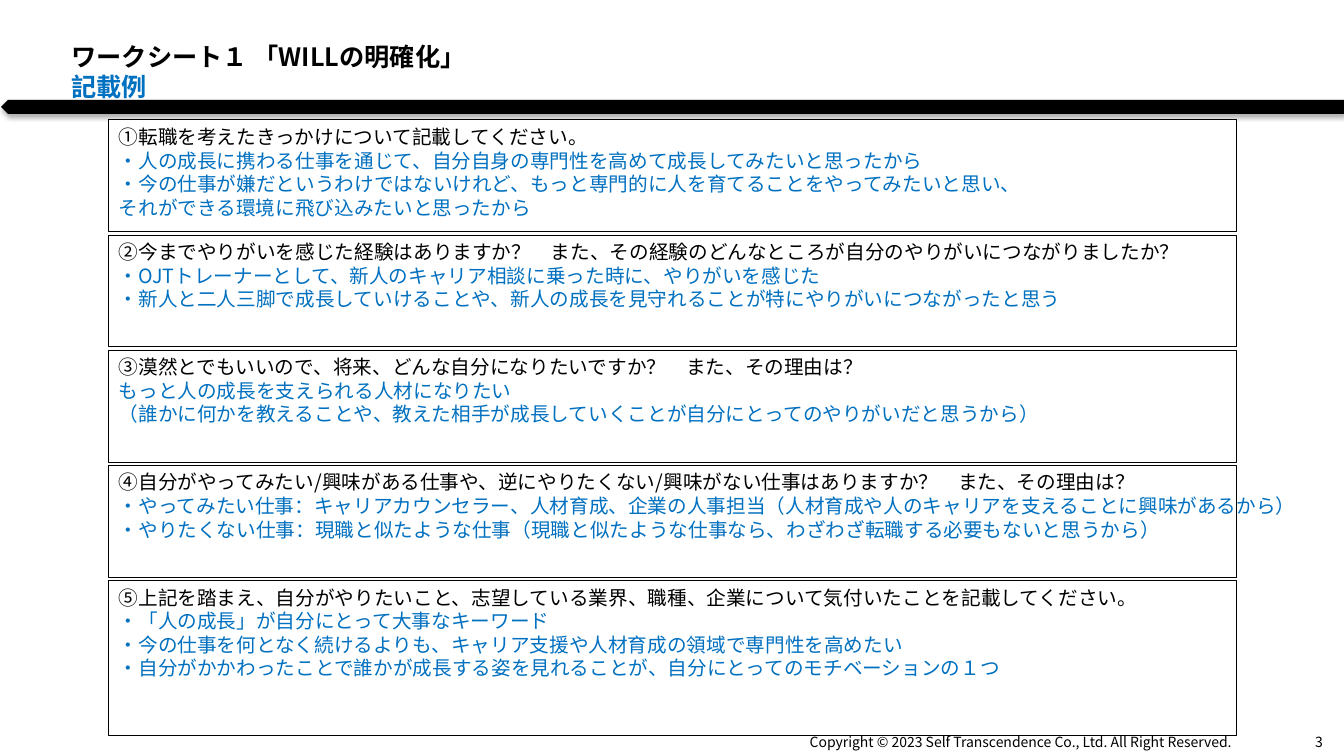
from dataclasses import dataclass

from lxml import etree
from pptx import Presentation
from pptx.dml.color import RGBColor
from pptx.enum.shapes import MSO_SHAPE
from pptx.enum.text import MSO_ANCHOR, MSO_AUTO_SIZE, PP_ALIGN
from pptx.oxml.ns import qn
from pptx.shapes.autoshape import Shape
from pptx.slide import Slide
from pptx.text.text import _Run
from pptx.util import Emu, Inches, Pt

RECTANGLE = MSO_SHAPE.RECTANGLE
PENTAGON = MSO_SHAPE.PENTAGON
TOP = MSO_ANCHOR.TOP
BOTTOM = MSO_ANCHOR.BOTTOM
LEFT = PP_ALIGN.LEFT
RIGHT = PP_ALIGN.RIGHT
GROW = MSO_AUTO_SIZE.SHAPE_TO_FIT_TEXT

BLACK = RGBColor(0x00, 0x00, 0x00)
WHITE = RGBColor(0xFF, 0xFF, 0xFF)
BLUE = RGBColor(0x00, 0x70, 0xC0)
FONT = "Noto Sans CJK JP"

SLIDE_WIDTH = Inches(13.33)
SLIDE_HEIGHT = Inches(7.5)

QUESTION_TOP = 15.87
QUESTION_HEIGHT = 14.8
QUESTION_GAP = 0.43
LAST_QUESTION_HEIGHT = 20.53


@dataclass(frozen=True)
class Area:
    """Position and size in percent of the slide."""

    left: float
    top: float
    width: float
    height: float

    def lengths(self) -> tuple[Emu, Emu, Emu, Emu]:
        return (
            Emu(round(SLIDE_WIDTH * self.left / 100)),
            Emu(round(SLIDE_HEIGHT * self.top / 100)),
            Emu(round(SLIDE_WIDTH * self.width / 100)),
            Emu(round(SLIDE_HEIGHT * self.height / 100)),
        )


@dataclass(frozen=True)
class Question:
    prompt: str
    answers: tuple[str, ...]
    height: float = QUESTION_HEIGHT


@dataclass(frozen=True)
class FooterText:
    text: str
    area: Area
    line_spacing: float = 1.0


QUESTIONS = (
    Question(
        "①転職を考えたきっかけについて記載してください。",
        (
            "・人の成長に携わる仕事を通じて、自分自身の専門性を高めて成長してみたいと思ったから",
            "・今の仕事が嫌だというわけではないけれど、もっと専門的に人を育てることをやってみたいと思い、",
            "それができる環境に飛び込みたいと思ったから",
        ),
    ),
    Question(
        "②今までやりがいを感じた経験はありますか？　また、その経験のどんなところが自分のやりがいにつながりましたか？",
        (
            "・OJTトレーナーとして、新人のキャリア相談に乗った時に、やりがいを感じた",
            "・新人と二人三脚で成長していけることや、新人の成長を見守れることが特にやりがいにつながったと思う",
        ),
    ),
    Question(
        "③漠然とでもいいので、将来、どんな自分になりたいですか？　また、その理由は？",
        (
            "もっと人の成長を支えられる人材になりたい",
            "（誰かに何かを教えることや、教えた相手が成長していくことが自分にとってのやりがいだと思うから）",
        ),
    ),
    Question(
        "④自分がやってみたい/興味がある仕事や、逆にやりたくない/興味がない仕事はありますか？　また、その理由は？",
        (
            "・やってみたい仕事：キャリアカウンセラー、人材育成、企業の人事担当（人材育成や人のキャリアを支えることに興味があるから）",
            "・やりたくない仕事：現職と似たような仕事（現職と似たような仕事なら、わざわざ転職する必要もないと思うから）",
        ),
    ),
    Question(
        "⑤上記を踏まえ、自分がやりたいこと、志望している業界、職種、企業について気付いたことを記載してください。",
        (
            "・「人の成長」が自分にとって大事なキーワード",
            "・今の仕事を何となく続けるよりも、キャリア支援や人材育成の領域で専門性を高めたい",
            "・自分がかかわったことで誰かが成長する姿を見れることが、自分にとってのモチベーションの１つ",
        ),
        LAST_QUESTION_HEIGHT,
    ),
)

FOOTER_TEXTS = (
    FooterText(
        "Copyright © 2023 Self Transcendence Co., Ltd. All Right Reserved.",
        Area(44.49, 95.2, 47.86, 4.67),
    ),
    FooterText("3", Area(92.72, 94.67, 6.45, 5.2), 0.8),
)


def format_run(run: _Run, size: int, color: RGBColor, bold: bool = False) -> None:
    run.font.size = Pt(size)
    run.font.bold = bold
    run.font.color.rgb = color
    run.font.name = FONT
    properties = run.font._element
    etree.SubElement(properties, qn("a:ea")).set("typeface", FONT)


def add_filled_shape(slide: Slide, kind: MSO_SHAPE, area: Area, color: RGBColor) -> Shape:
    shape = slide.shapes.add_shape(kind, *area.lengths())
    shape.shadow.inherit = False
    shape.fill.solid()
    shape.fill.fore_color.rgb = color
    return shape


def add_band(slide: Slide) -> None:
    band = add_filled_shape(slide, PENTAGON, Area(0.08, 13.2, 100, 1.87), BLACK)
    band.line.fill.background()
    properties = band._element.spPr
    properties.find(qn("a:xfrm")).set("flipH", "1")
    shadow = etree.SubElement(
        properties.find(qn("a:effectLst")),
        qn("a:outerShdw"),
        blurRad=str(Pt(3.5)),
        dist=str(Pt(2.2)),
        dir="5400000",
        rotWithShape="0",
    )
    shadow_color = etree.SubElement(shadow, qn("a:srgbClr"), val=str(BLACK))
    etree.SubElement(shadow_color, qn("a:alpha"), val="32000")


def add_title(slide: Slide) -> None:
    text_frame = slide.shapes.add_textbox(*Area(4.58, 4.8, 33.76, 5.33).lengths()).text_frame
    text_frame.word_wrap = False
    text_frame.auto_size = GROW
    paragraph = text_frame.paragraphs[0]
    paragraph.text = "ワークシート１ 「WILLの明確化」　\v記載例"
    for run, color in zip(paragraph.runs, (BLACK, BLUE)):
        format_run(run, 18, color, bold=True)


def add_question(slide: Slide, question: Question, top: float) -> None:
    box = add_filled_shape(slide, RECTANGLE, Area(8.1, top, 83.87, question.height), WHITE)
    box.line.color.rgb = BLACK
    box.line.width = Pt(0.75)
    text_frame = box.text_frame
    text_frame.word_wrap = False
    text_frame.vertical_anchor = TOP
    text_frame.text = "\n".join((question.prompt, *question.answers))
    for index, paragraph in enumerate(text_frame.paragraphs):
        paragraph.alignment = LEFT
        format_run(paragraph.runs[0], 14, BLUE if index else BLACK)


def add_footer_text(slide: Slide, footer: FooterText) -> None:
    text_frame = slide.shapes.add_textbox(*footer.area.lengths()).text_frame
    text_frame.word_wrap = True
    text_frame.vertical_anchor = BOTTOM
    text_frame.text = footer.text
    paragraph = text_frame.paragraphs[0]
    paragraph.alignment = RIGHT
    paragraph.line_spacing = footer.line_spacing
    format_run(paragraph.runs[0], 10, BLACK)


def main() -> None:
    presentation = Presentation()
    presentation.slide_width = SLIDE_WIDTH
    presentation.slide_height = SLIDE_HEIGHT
    slide = presentation.slides.add_slide(presentation.slide_layouts[6])
    add_band(slide)
    add_title(slide)
    for index, question in enumerate(QUESTIONS):
        add_question(slide, question, QUESTION_TOP + index * (QUESTION_HEIGHT + QUESTION_GAP))
    for footer in FOOTER_TEXTS:
        add_footer_text(slide, footer)
    presentation.save("out.pptx")


if __name__ == "__main__":
    main()
